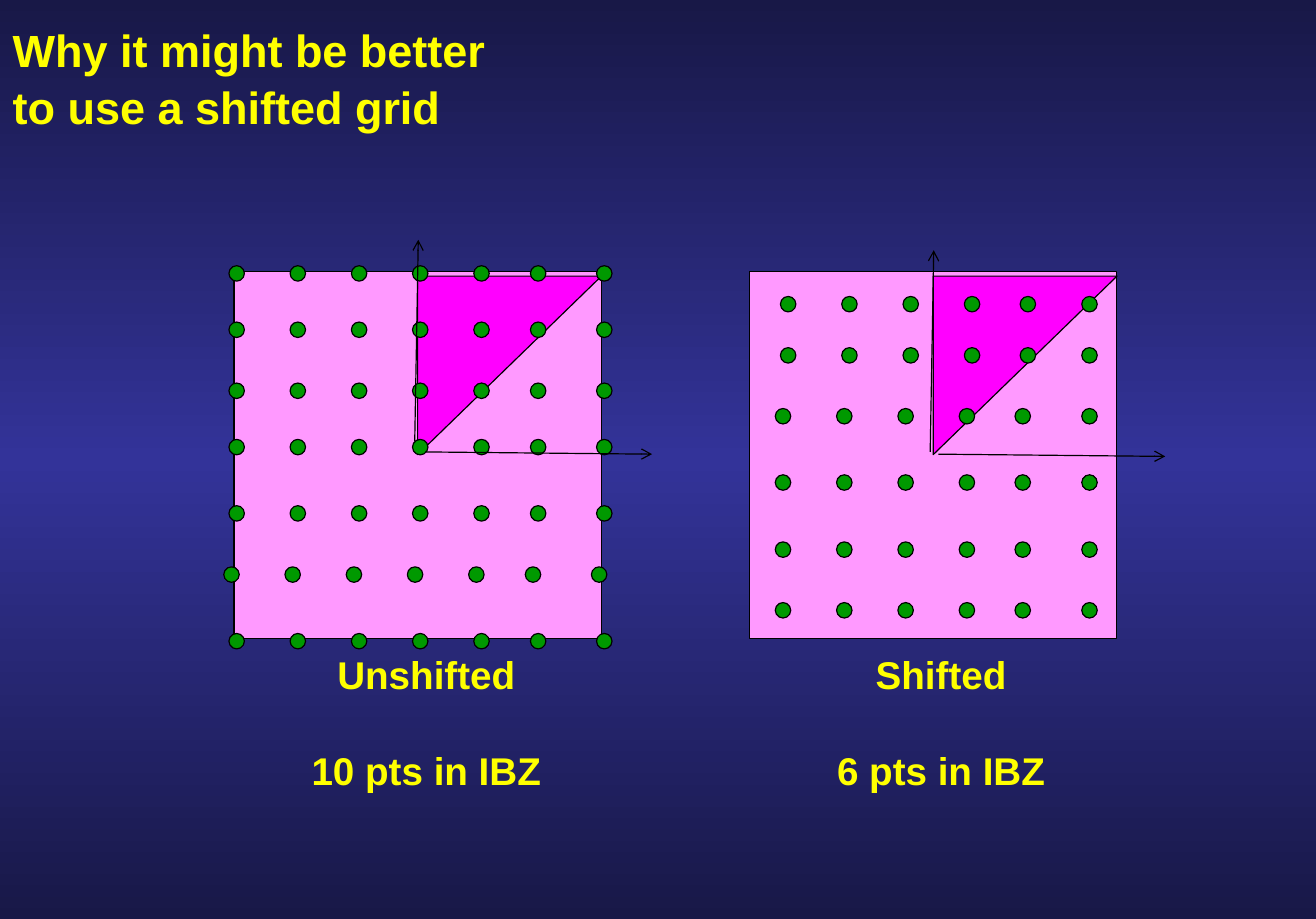
from copy import deepcopy

from pptx import Presentation
from pptx.dml.color import RGBColor
from pptx.enum.shapes import MSO_CONNECTOR, MSO_SHAPE
from pptx.enum.text import MSO_ANCHOR, MSO_AUTO_SIZE, PP_ALIGN
from pptx.oxml.ns import qn
from pptx.oxml.xmlchemy import OxmlElement
from pptx.util import Pt

NAVY = RGBColor(0x18, 0x18, 0x47)
BLUE = RGBColor(0x33, 0x33, 0x99)
YELLOW = RGBColor(0xFF, 0xFF, 0x00)
PINK = RGBColor(0xFF, 0x99, 0xFF)
MAGENTA = RGBColor(0xFF, 0x00, 0xFF)
GREEN = RGBColor(0x00, 0x99, 0x00)
BLACK = RGBColor(0x00, 0x00, 0x00)

TITLE = "Why it might be better \vto use a shifted grid"
BACKGROUND = [(0, NAVY), (0.5, BLUE), (1, NAVY)]

# Dot centres: xs are columns, rows are (y, sideways nudge).
# The nudge leaves out the columns from "fixed" on.
PANELS = [
    {
        "left": 145.5,
        "xs": [147.1, 185.1, 223.2, 261.2, 299.3, 334.5, 375.6],
        "rows": [(169.9, 0), (204.9, 0), (242.8, 0), (277.8, 0),
                 (319, 0), (357, -3.2), (398.4, 0)],
        "fixed": 7,
        "x_axis": (264.2, 280.8),
        "y_axis": (257.8, 274.3),
        "label_box": (185.8, 158.4),
        "label": ["Unshifted", "10 pts in IBZ"],
    },
    {
        "left": 466,
        "xs": [486.7, 524.8, 562.9, 601, 635.7, 677.2],
        "rows": [(189, 3.2), (220.8, 3.2), (258.6, 0),
                 (299.8, 0), (341.5, 0), (379.2, 0)],
        "fixed": 5,
        "x_axis": (583.2, 282.2),
        "y_axis": (578.2, 280.8),
        "label_box": (512.6, 144.7),
        "label": ["Shifted", "6 pts in IBZ"],
    },
]

ZONE_TOP, ZONE_SIZE = 168.5, 228.2
WEDGE_DX, WEDGE_TOP, WEDGE_W, WEDGE_H = 114.1, 171.6, 114.2, 110.9
DOT = 9.6
X_AXIS_RUN = (141.1, 1.4)
Y_AXIS_RUN = (2.2, -125.3)
LABEL_TOP, LABEL_H, LABEL_GAP = 399.6, 94.3, 29


def add_solid(s, kind, x, y, w, h, color):
    sp = s.shapes.add_shape(kind, Pt(x), Pt(y), Pt(w), Pt(h))
    sp.shadow.inherit = False
    sp.fill.solid()
    sp.fill.fore_color.rgb = color
    sp.line.color.rgb = BLACK
    sp.line.width = Pt(0.75)
    return sp


def add_arrow(s, start, run):
    (x, y), (dx, dy) = start, run
    arrow = s.shapes.add_connector(
        MSO_CONNECTOR.STRAIGHT, Pt(x), Pt(y), Pt(x + dx), Pt(y + dy))
    arrow.line.color.rgb = BLACK
    arrow.line.width = Pt(0.75)
    tail = OxmlElement("a:tailEnd")
    tail.set("type", "arrow")
    arrow.line._get_or_add_ln().append(tail)
    arrow._element.spPr.append(OxmlElement("a:effectLst"))


def format_text(p, size, align):
    p.alignment = align
    p.line_spacing = 1.05
    for r in p.runs:
        for name, value in {"name": "Arial", "size": Pt(size), "bold": True}.items():
            setattr(r.font, name, value)
        r.font.color.rgb = YELLOW


def paint_background(s):
    fill = s.background.fill
    fill.gradient()
    fill.gradient_angle = 270
    stops = s.element.find(".//" + qn("a:gsLst"))
    stops.append(deepcopy(stops[0]))
    for stop, (position, color) in zip(fill.gradient_stops, BACKGROUND):
        stop.position = position
        stop.color.rgb = color


def add_title(s):
    title = s.shapes.title
    title.left, title.top, title.width, title.height = Pt(0), Pt(0), Pt(736), Pt(95)
    tf = title.text_frame
    frame = {"margin_left": Pt(7.9), "margin_right": Pt(7.9),
             "margin_top": Pt(4.3), "margin_bottom": Pt(4.3),
             "vertical_anchor": MSO_ANCHOR.MIDDLE,
             "auto_size": MSO_AUTO_SIZE.NONE, "word_wrap": True}
    for name, value in frame.items():
        setattr(tf, name, value)
    tf.text = TITLE
    format_text(tf.paragraphs[0], 28, PP_ALIGN.LEFT)


def add_label(s, box, lines):
    left, width = box
    tf = s.shapes.add_textbox(
        Pt(left), Pt(LABEL_TOP), Pt(width), Pt(LABEL_H)).text_frame
    tf.word_wrap = False
    tf.text = "\n".join(lines)
    for p in tf.paragraphs:
        format_text(p, 24, PP_ALIGN.CENTER)
    tf.paragraphs[1].space_before = Pt(LABEL_GAP)


def add_panel(s, panel):
    left = panel["left"]
    add_solid(s, MSO_SHAPE.RECTANGLE, left, ZONE_TOP, ZONE_SIZE, ZONE_SIZE, PINK)

    # A quarter turn swaps the sides around a fixed centre.
    turn = (WEDGE_W - WEDGE_H) / 2
    wedge = add_solid(s, MSO_SHAPE.RIGHT_TRIANGLE, left + WEDGE_DX + turn,
                      WEDGE_TOP - turn, WEDGE_H, WEDGE_W, MAGENTA)
    wedge.rotation = 90

    for y, nudge in panel["rows"]:
        for column, x in enumerate(panel["xs"]):
            dx = nudge if column < panel["fixed"] else 0
            add_solid(s, MSO_SHAPE.OVAL, x + dx - DOT / 2, y - DOT / 2, DOT, DOT, GREEN)

    add_arrow(s, panel["x_axis"], X_AXIS_RUN)
    add_arrow(s, panel["y_axis"], Y_AXIS_RUN)
    add_label(s, panel["label_box"], panel["label"])


def main():
    prs = Presentation()
    prs.slide_width, prs.slide_height = Pt(818), Pt(571)
    s = prs.slides.add_slide(prs.slide_layouts[5])
    paint_background(s)
    add_title(s)
    for panel in PANELS:
        add_panel(s, panel)
    prs.save("out.pptx")


if __name__ == "__main__":
    main()
